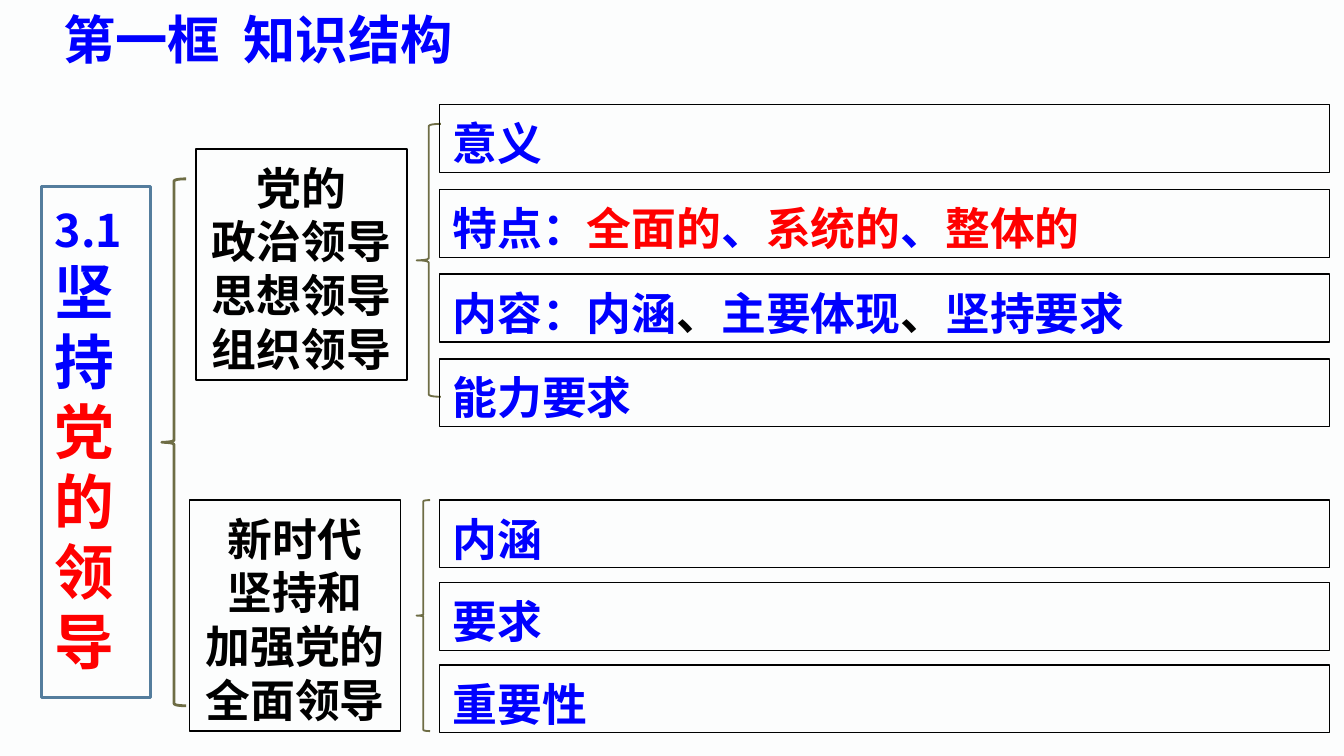
from lxml import etree
from pptx import Presentation
from pptx.dml.color import RGBColor
from pptx.enum import shapes, text
from pptx.oxml.ns import qn
from pptx.util import Pt

BLUE = RGBColor(0x00, 0x00, 0xFF)
RED = RGBColor(0xFF, 0x00, 0x00)
BLACK = RGBColor(0x00, 0x00, 0x00)
STEEL = RGBColor(0x54, 0x7D, 0x9D)
OLIVE = RGBColor(0x6E, 0x6D, 0x45)
PAPER = RGBColor(0xFC, 0xFD, 0xFD)
FONT = "Noto Sans CJK SC"

deck = Presentation()
deck.slide_width, deck.slide_height = Pt(720), Pt(405)
page = deck.slides.add_slide(deck.slide_layouts[6])
page.background.fill.solid()
page.background.fill.fore_color.rgb = PAPER


def add_outline(kind, left, top, width, height, color, weight):
    shape = page.shapes.add_shape(kind, Pt(left), Pt(top), Pt(width), Pt(height))
    shape.shadow.inherit = False
    shape.fill.background()
    shape.line.color.rgb = color
    shape.line.width = Pt(weight)
    return shape


def write(box, lines, size, spacing, align=text.PP_ALIGN.LEFT, inset=6):
    frame = box.text_frame
    frame.word_wrap = True
    frame.auto_size = text.MSO_AUTO_SIZE.NONE
    frame.vertical_anchor = text.MSO_ANCHOR.TOP
    frame.margin_top, frame.margin_bottom = Pt(inset), Pt(0)
    for index, spans in enumerate(lines):
        para = frame.add_paragraph() if index else frame.paragraphs[0]
        para.alignment = align
        para.line_spacing = Pt(spacing)
        para.font.name, para.font.size, para.font.bold = FONT, Pt(size), True
        etree.SubElement(para.font._element, qn("a:ea"), typeface=FONT)
        for words, color in spans:
            span = para.add_run()
            span.text = words
            span.font.color.rgb = color
    return frame


RECT = shapes.MSO_SHAPE.RECTANGLE
BRACE = shapes.MSO_SHAPE.LEFT_BRACE

title = page.shapes.add_textbox(Pt(26.9), Pt(-2.2), Pt(232), Pt(41))
write(title, [[("第一框  知识结构", BLUE)]], 28, 33.6)

root = add_outline(RECT, 22.2, 100, 58.5, 273.8, STEEL, 1.5)
root_spans = [("3.1", BLUE), ("坚持", BLUE), ("党的领导", RED)]
root_frame = write(root, [root_spans], 32, 37.5, inset=0)
root_frame.paragraphs[0].runs[0].font.size = Pt(24)

for left, top, width, height, weight in [
    (86.7, 95.8, 13, 282.3, 1.5),
    (223.2, 66.4, 13, 146.2, 1),
    (223.2, 267.9, 7.2, 123.8, 1),
]:
    add_outline(BRACE, left, top, width, height, OLIVE, weight)

for left, top, lines in [
    (104.9, 79.9, ["党的", "政治领导", "思想领导", "组织领导"]),
    (101.5, 267.9, ["新时代", "坚持和", "加强党的", "全面领导"]),
]:
    topic = add_outline(RECT, left, top, 113.2, 123.8, BLACK, 0.75)
    write(topic, [[(line, BLACK)] for line in lines], 24, 28.8, text.PP_ALIGN.CENTER)

traits = [("特点：", BLUE), ("全面的", RED), ("、", BLUE), ("系统的", RED), ("、", BLUE), ("整体的", RED)]
contents = [("内容：内涵", BLUE), ("、", BLACK), ("主要体现", BLUE), ("、", BLACK), ("坚持要求", BLUE)]
for first_top, step, rows in [
    (56.1, 45.4, [[("意义", BLUE)], traits, contents, [("能力要求", BLUE)]]),
    (267.9, 44.2, [[("内涵", BLUE)], [("要求", BLUE)], [("重要性", BLUE)]]),
]:
    for index, spans in enumerate(rows):
        point = add_outline(RECT, 235.4, first_top + index * step, 476.8, 36.3, BLACK, 0.75)
        write(point, [spans], 24, 28.8)

deck.save("out.pptx")
